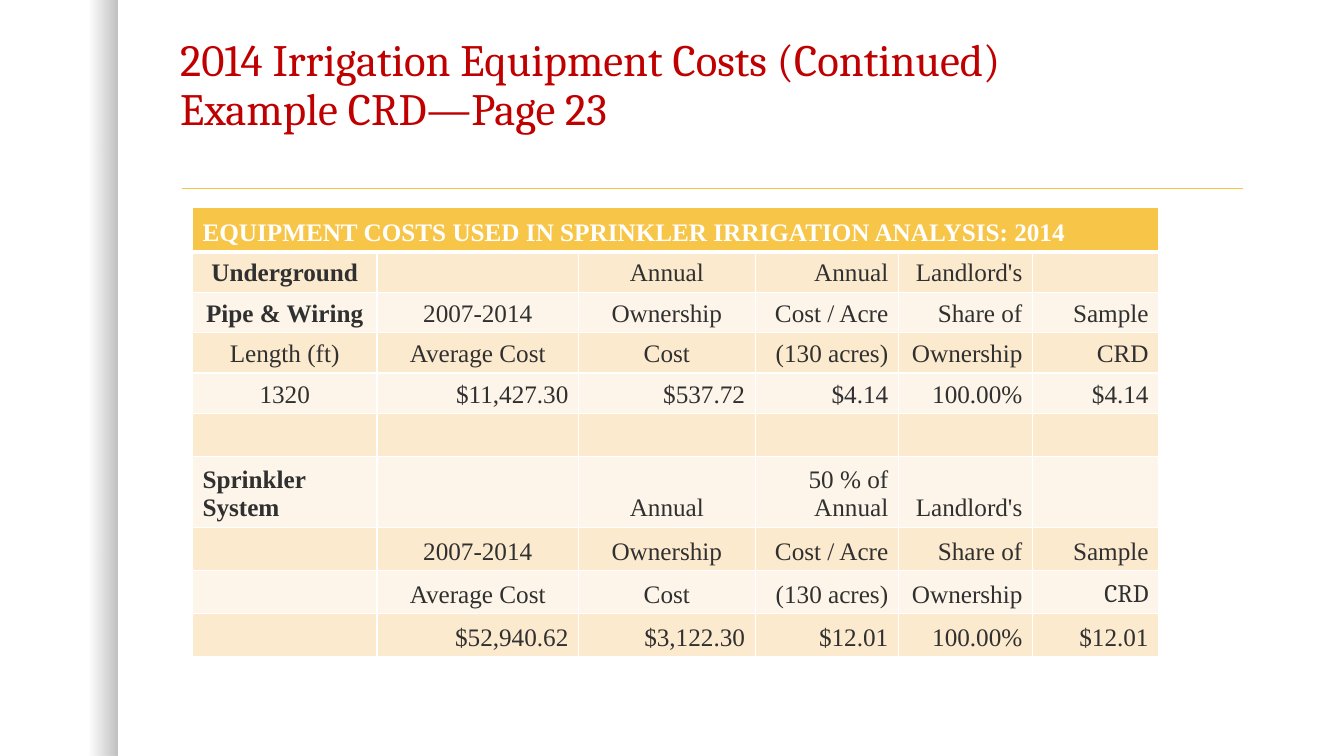
from lxml import etree
from pptx import Presentation
from pptx.dml.color import RGBColor as Rgb
from pptx.enum.shapes import MSO_CONNECTOR as Link, MSO_SHAPE as Shape
from pptx.enum.text import MSO_ANCHOR as Anchor, PP_ALIGN as Align
from pptx.oxml import parse_xml
from pptx.oxml.ns import qn
from pptx.util import Cm, Pt

HUES = {
    "title": "C00000", "gold": "F7C547", "white": "FFFFFF",
    "ink": "303030", "dark": "FCEACF", "light": "FDF5E9", "shade": "000000",
}
SERIF, TIMES = "Cambria", "Times New Roman"
SPACE = "http://schemas.openxmlformats.org/drawingml/2006/main"

TITLE = ["2014 Irrigation Equipment Costs (Continued)", "Example CRD—Page 23"]
HEAD = "EQUIPMENT COSTS USED IN SPRINKLER IRRIGATION ANALYSIS: 2014"
ROWS = [
    ["Underground", "", "Annual", "Annual", "Landlord's", ""],
    ["Pipe & Wiring", "2007-2014", "Ownership", "Cost / Acre", "Share of", "Sample"],
    ["Length (ft)", "Average Cost", "Cost", "(130 acres)", "Ownership", "CRD"],
    ["1320", "$11,427.30", "$537.72", "$4.14", "100.00%", "$4.14"],
    [""] * 6,
    ["Sprinkler System", "", "Annual", "50 % of Annual", "Landlord's", ""],
    ["", "2007-2014", "Ownership", "Cost / Acre", "Share of", "Sample"],
    ["", "Average Cost", "Cost", "(130 acres)", "Ownership", "CRD"],
    ["", "$52,940.62", "$3,122.30", "$12.01", "100.00%", "$12.01"],
]
BOLD = {"Underground", "Pipe & Wiring", "Sprinkler System"}
WIDTHS = [4.65, 5.08, 4.45, 3.61, 3.38, 3.18]
HEIGHTS = [1.12, 0.84, 0.84, 0.84, 0.69, 1.09, 1.14, 1.09, 1.09, 1.09]


def hue(name):
    return Rgb.from_string(HUES[name])


def add_run(para, text, size, face, color, bold=False):
    run = para.add_run()
    run.text = text
    font = run.font
    font.size, font.name, font.bold = Pt(size), face, bold
    font.color.rgb = hue(color)


def add_edge(slide, left, top, width, height):
    """Page edge with a soft shadow that fades out to the left."""
    edge = slide.shapes.add_shape(
        Shape.RECTANGLE, Cm(left), Cm(top), Cm(width), Cm(height))
    edge.shadow.inherit = False
    edge.line.fill.background()
    edge.fill.gradient()
    edge.fill.gradient_angle = 0
    for stop, (place, alpha) in zip(edge.fill.gradient_stops, [(0.75, 0), (1, 25)]):
        stop.position = place
        stop.color.rgb = hue("shade")
    for tint, alpha in zip(edge.fill._fill._gradFill.iter(qn("a:srgbClr")), [0, 25]):
        etree.SubElement(tint, qn("a:alpha")).set("val", str(alpha * 1000))


def add_rule(slide, left, top, width):
    rule = slide.shapes.add_connector(
        Link.STRAIGHT, Cm(left), Cm(top), Cm(left + width), Cm(top))
    rule.line.color.rgb = hue("gold")
    rule.line.width = Pt(1)
    etree.SubElement(rule._element.spPr, qn("a:effectLst"))


def add_title(slide, left, top, width, height):
    frame = slide.shapes.add_textbox(
        Cm(left), Cm(top), Cm(width), Cm(height)).text_frame
    frame.word_wrap = True
    frame.vertical_anchor = Anchor.BOTTOM
    para = frame.paragraphs[0]
    para.line_spacing = 0.9
    for num, line in enumerate(TITLE):
        if num:
            para.add_line_break()
        add_run(para, line, 32, SERIF, "title")


def add_sides(cell, base):
    """White borders; base is the width of the bottom one in points."""
    props = cell._tc.get_or_add_tcPr()
    for side, width in zip("LRTB", (1, 1, 1, base)):
        props.append(parse_xml(
            f'<a:ln{side} xmlns:a="{SPACE}" w="{Pt(width)}"><a:solidFill>'
            f'<a:srgbClr val="{HUES["white"]}"/></a:solidFill></a:ln{side}>'))


def side_of(text, col):
    if text == "Sprinkler System":
        return Align.LEFT
    if col > 2 or text.startswith("$"):
        return Align.RIGHT
    return Align.CENTER


def fill_cell(cell, text, fill, align, face=TIMES, color="ink", bold=False, base=1):
    add_sides(cell, base)
    cell.fill.solid()
    cell.fill.fore_color.rgb = hue(fill)
    cell.vertical_anchor = Anchor.BOTTOM
    para = cell.text_frame.paragraphs[0]
    para.alignment = align
    if text:
        add_run(para, text, 18, face, color, bold)
    else:
        para.font.size = Pt(18)


def add_costs(slide, left, top):
    table = slide.shapes.add_table(
        len(HEIGHTS), len(WIDTHS), Cm(left), Cm(top),
        Cm(sum(WIDTHS)), Cm(sum(HEIGHTS))).table
    table.horz_banding = table.first_row = False
    for col, width in zip(table.columns, WIDTHS):
        col.width = Cm(width)
    for row, height in zip(table.rows, HEIGHTS):
        row.height = Cm(height)

    table.cell(0, 0).merge(table.cell(0, len(WIDTHS) - 1))
    for col in range(len(WIDTHS)):
        fill_cell(table.cell(0, col), "" if col else HEAD, "gold", Align.LEFT,
                  color="white", bold=True, base=3)
    for row, texts in enumerate(ROWS, 1):
        fill = "dark" if row % 2 else "light"
        for col, text in enumerate(texts):
            face = SERIF if (row, text) == (8, "CRD") else TIMES
            fill_cell(table.cell(row, col), text, fill, side_of(text, col),
                      face, bold=text in BOLD)


def main():
    deck = Presentation()
    deck.slide_width, deck.slide_height = Cm(33.87), Cm(19.05)
    slide = deck.slides.add_slide(deck.slide_layouts[6])
    add_edge(slide, 0, 0, 2.95, 19.05)
    add_rule(slide, 4.6, 4.75, 26.72)
    add_title(slide, 4.29, 0.2, 27.38, 3.33)
    add_costs(slide, 4.85, 5.23)
    deck.save("out.pptx")


if __name__ == "__main__":
    main()
